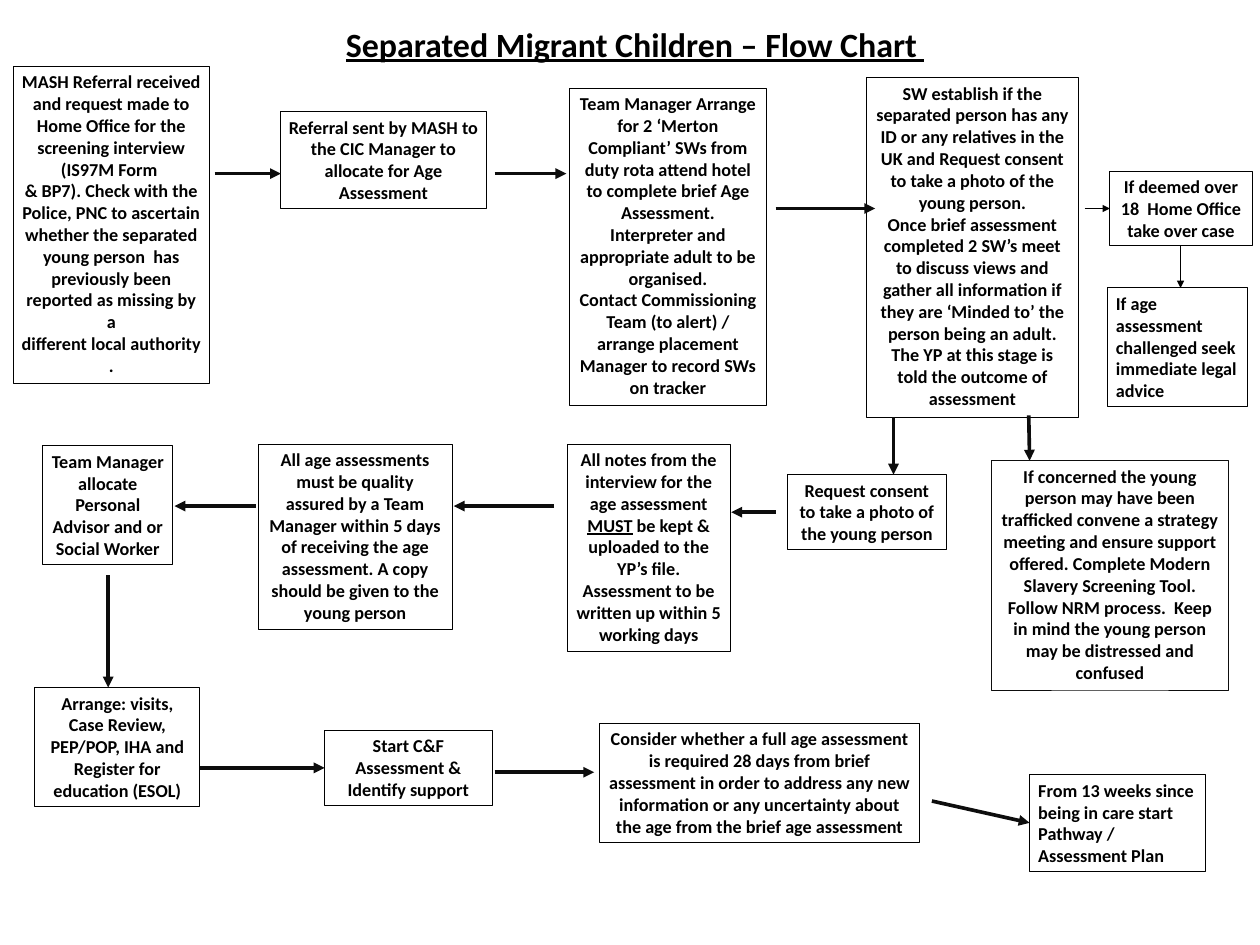
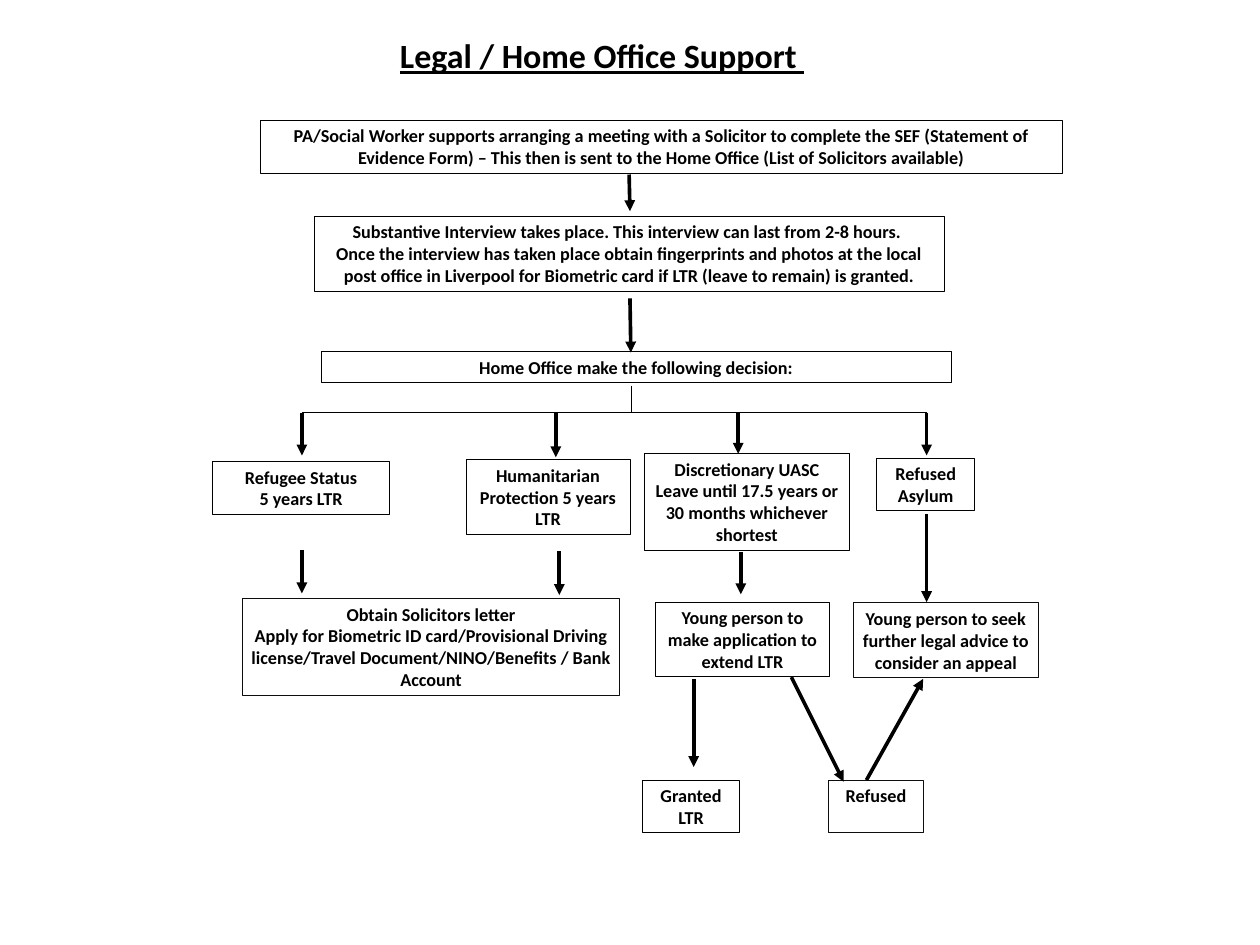
from dataclasses import dataclass

from pptx import Presentation
from pptx.dml.color import RGBColor
from pptx.enum.shapes import MSO_CONNECTOR, MSO_SHAPE
from pptx.enum.text import MSO_ANCHOR, PP_ALIGN
from pptx.oxml.ns import qn
from pptx.slide import Slide
from pptx.text.text import TextFrame
from pptx.util import Inches, Pt
from lxml.etree import SubElement

BLACK = RGBColor(0x00, 0x00, 0x00)
INK = RGBColor(0x0D, 0x0D, 0x0D)
FONT = "Calibri"
TITLE_SIZE = Pt(28)
BODY_SIZE = Pt(15)
LINE_HEIGHT = Pt(18.2)
BOX_PADDING = Inches(0.1)
THICK, THIN = 3, 0.5


@dataclass
class Title:
    left: float
    top: float
    width: float
    text: str


@dataclass
class Box:
    """A step of the flow; its height follows from the number of lines."""
    left: float
    top: float
    width: float
    lines: int
    text: str
    border: RGBColor = BLACK
    align: PP_ALIGN = PP_ALIGN.CENTER
    underlined: str = ""


@dataclass
class Link:
    x1: float
    y1: float
    x2: float
    y2: float
    width: float = THICK
    color: RGBColor = BLACK
    head: bool = True


def format_text(tf: TextFrame, size: Pt, align: PP_ALIGN) -> None:
    for p in tf.paragraphs:
        p.alignment = align
        for r in p.runs:
            r.font.name = FONT
            r.font.size = size
            r.font.bold = True
            r.font.color.rgb = BLACK


def draw_title(s: Slide, title: Title) -> None:
    tf = s.shapes.add_textbox(Inches(title.left), Inches(title.top),
                              Inches(title.width), Inches(0.57)).text_frame
    tf.word_wrap = True
    tf.text = title.text
    format_text(tf, TITLE_SIZE, PP_ALIGN.CENTER)
    tf.paragraphs[0].runs[0].font.underline = True


def draw_box(s: Slide, box: Box) -> None:
    sp = s.shapes.add_shape(MSO_SHAPE.RECTANGLE, Inches(box.left), Inches(box.top),
                            Inches(box.width), BOX_PADDING + box.lines * LINE_HEIGHT)
    sp.shadow.inherit = False
    sp.fill.background()
    sp.line.color.rgb = box.border
    sp.line.width = Pt(0.75)
    tf = sp.text_frame
    tf.word_wrap = True
    tf.vertical_anchor = MSO_ANCHOR.TOP
    if box.underlined:
        before, word, after = box.text.partition(box.underlined)
        p = tf.paragraphs[0]
        for part in (before, word, after):
            r = p.add_run()
            r.text = part
            r.font.underline = part == word
    else:
        tf.text = box.text
    format_text(tf, BODY_SIZE, box.align)


def draw_link(s: Slide, link: Link) -> None:
    line = s.shapes.add_connector(MSO_CONNECTOR.STRAIGHT, Inches(link.x1), Inches(link.y1),
                                  Inches(link.x2), Inches(link.y2))
    line.line.color.rgb = link.color
    line.line.width = Pt(link.width)
    spPr = line._element.spPr
    if link.head:
        SubElement(spPr.find(qn("a:ln")), qn("a:tailEnd"), type="triangle")
    SubElement(spPr, qn("a:effectLst"))


def draw_slide(prs: Presentation, title: Title, boxes: list[Box], links: list[Link]) -> None:
    s = prs.slides.add_slide(prs.slide_layouts[6])
    draw_title(s, title)
    for box in boxes:
        draw_box(s, box)
    for link in links:
        draw_link(s, link)


FLOW_TITLE = Title(2.88, 0.22, 8.8, "Separated Migrant Children – Flow Chart ")
FLOW_BOXES = [
    Box(0.15, 0.76, 2.25, 14,
        "MASH Referral received and request made to Home Office for the screening interview "
        "(IS97M Form \v& BP7). Check with the Police, PNC to ascertain whether the separated "
        "young person  has previously been reported as missing by a\n"
        "different local authority ."),
    Box(3.21, 1.28, 2.37, 4,
        "Referral sent by MASH to the CIC Manager to allocate for Age Assessment"),
    Box(6.53, 1.01, 2.25, 14,
        "Team Manager Arrange for 2 ‘Merton Compliant’ SWs from duty rota attend hotel "
        "to complete brief Age Assessment.\n"
        "Interpreter and appropriate adult to be organised.\n"
        "Contact Commissioning Team (to alert) / arrange placement\n"
        "Manager to record SWs on tracker"),
    Box(9.93, 0.89, 2.43, 15,
        "SW establish if the separated person has any ID or any relatives in the UK and "
        "Request consent to take a photo of the young person.\n"
        "Once brief assessment completed 2 SW’s meet to discuss views and gather all "
        "information if they are ‘Minded to’ the person being an adult. The YP at this "
        "stage is told the outcome of assessment"),
    Box(12.72, 1.96, 1.63, 3, "If deemed over 18  Home Office take over case"),
    Box(12.69, 3.3, 1.61, 5, "If age assessment challenged seek immediate legal advice",
        align=PP_ALIGN.LEFT),
    Box(11.36, 5.28, 2.72, 10,
        "If concerned the young person may have been trafficked convene a strategy meeting "
        "and ensure support offered. Complete Modern Slavery Screening Tool. Follow NRM "
        "process.  Keep in mind the young person may be distressed and confused", INK),
    Box(9.02, 5.44, 1.83, 3, "Request consent to take a photo of the young person"),
    Box(6.5, 5.09, 1.87, 9,
        "All notes from the interview for the age assessment MUST be kept & uploaded to the "
        "YP’s file. Assessment to be written up within 5 working days", underlined="MUST"),
    Box(2.96, 5.09, 2.22, 8,
        "All age assessments must be quality assured by a Team Manager within 5 days of "
        "receiving the age assessment. A copy should be given to the young person"),
    Box(0.49, 5.11, 1.49, 5, "Team Manager allocate Personal Advisor and or Social Worker"),
    Box(0.4, 7.88, 1.89, 5,
        "Arrange: visits, Case Review, PEP/POP, IHA and Register for education (ESOL)"),
    Box(3.72, 8.37, 1.92, 3, "Start C&F Assessment & Identify support"),
    Box(6.87, 8.29, 3.67, 5,
        "Consider whether a full age assessment is required 28 days from brief assessment in "
        "order to address any new information or any uncertainty about the age from the "
        "brief age assessment"),
    Box(11.8, 8.88, 2.01, 4,
        "From 13 weeks since being in care start Pathway / Assessment Plan",
        align=PP_ALIGN.LEFT),
]
FLOW_LINKS = [Link(*ends, color=INK) for ends in (
    (2.46, 1.99, 3.22, 1.99),
    (5.67, 1.99, 6.49, 1.99),
    (8.89, 2.39, 10.03, 2.39),
    (10.24, 4.78, 10.24, 5.44),
    (11.79, 4.76, 11.8, 5.28),
    (8.89, 5.87, 8.38, 5.87),
    (6.35, 5.8, 5.2, 5.8),
    (2.93, 5.8, 2, 5.8),
    (1.24, 6.59, 1.24, 7.88),
    (2.29, 8.8, 3.72, 8.8),
    (5.67, 8.85, 6.81, 8.85),
    (10.68, 9.18, 11.8, 9.43),
)] + [
    Link(12.43, 2.39, 12.72, 2.39, THIN),
    Link(13.53, 2.82, 13.53, 3.3, THIN),
]

LEGAL_TITLE = Title(2.98, 0.35, 7.84, "Legal / Home Office Support ")
LEGAL_BOXES = [
    Box(2.98, 1.38, 9.2, 2,
        "PA/Social Worker supports arranging a meeting with a Solicitor to complete the SEF "
        "(Statement of Evidence Form) – This then is sent to the Home Office (List of "
        "Solicitors available)"),
    Box(3.6, 2.48, 7.22, 3,
        "Substantive Interview takes place. This interview can last from 2-8 hours. \v"
        "Once the interview has taken place obtain fingerprints and photos at the local "
        "post office in Liverpool for Biometric card if LTR (leave to remain) is granted."),
    Box(3.68, 4.03, 7.22, 1, "Home Office make the following decision:"),
    Box(2.44, 5.29, 2.02, 2, "Refugee Status\n5 years LTR"),
    Box(5.34, 5.27, 1.88, 3, "Humanitarian Protection 5 years LTR"),
    Box(7.39, 5.2, 2.34, 4,
        "Discretionary UASC Leave until 17.5 years or 30 months whichever shortest"),
    Box(10.05, 5.25, 1.12, 2, "Refused Asylum"),
    Box(2.78, 6.86, 4.32, 4,
        "Obtain Solicitors letter\nApply for Biometric ID card/Provisional Driving "
        "license/Travel Document/NINO/Benefits / Bank Account", INK),
    Box(7.51, 6.9, 2, 3, "Young person to make application to extend LTR"),
    Box(9.78, 6.91, 2.12, 3,
        "Young person to seek further legal advice to consider an appeal", INK),
    Box(7.36, 8.94, 1.12, 2, "Granted LTR"),
    Box(9.5, 8.94, 1.08, 2, "Refused", INK),
]
BRANCH_Y = 4.73
BRANCHES = {3.46: 5.22, 6.37: 5.24, 8.46: 5.2, 10.62: 5.22}
LEGAL_LINKS = [
    Link(7.21, 2, 7.22, 2.42),
    Link(7.22, 3.42, 7.23, 4.04),
    Link(7.23, 4.42, 7.23, BRANCH_Y, THIN, head=False),
    Link(min(BRANCHES), BRANCH_Y, max(BRANCHES), BRANCH_Y, THIN, head=False),
    *(Link(x, BRANCH_Y, x, end) for x, end in BRANCHES.items()),
    Link(3.46, 6.3, 3.46, 6.8),
    Link(6.41, 6.32, 6.41, 6.82),
    Link(8.49, 6.33, 8.49, 6.81),
    Link(10.62, 5.89, 10.62, 6.9),
    Link(7.95, 7.78, 7.95, 8.79),
    Link(9.07, 7.76, 9.67, 8.96),
    Link(9.93, 8.94, 10.58, 7.78),
]


def main() -> None:
    prs = Presentation()
    prs.slide_width = Inches(14.44)
    prs.slide_height = Inches(10.83)
    draw_slide(prs, FLOW_TITLE, FLOW_BOXES, FLOW_LINKS)
    draw_slide(prs, LEGAL_TITLE, LEGAL_BOXES, LEGAL_LINKS)
    prs.save("out.pptx")


if __name__ == "__main__":
    main()
